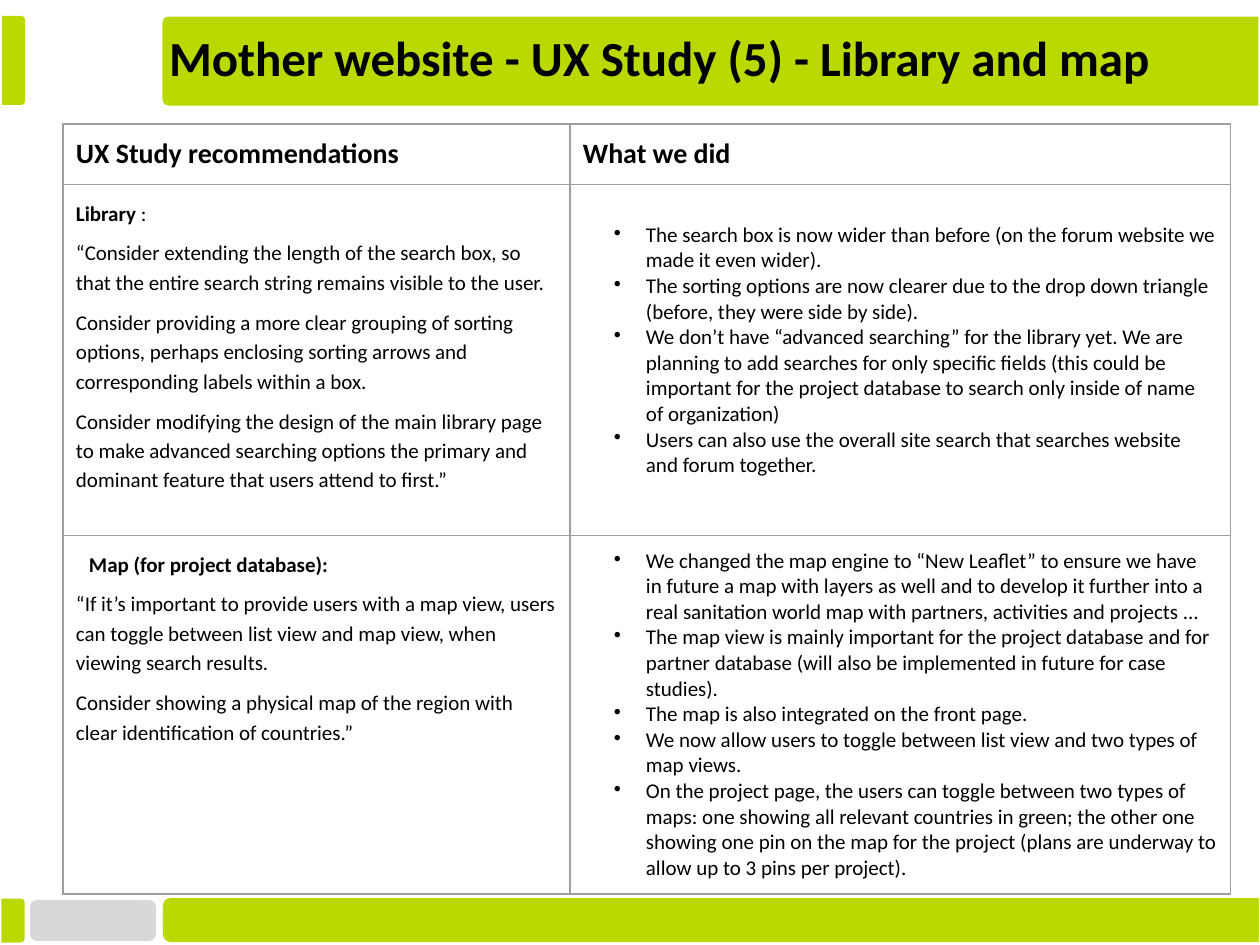
"""Build the slide on the library and map findings of the UX study."""
from dataclasses import dataclass

from lxml.etree import SubElement
from pptx import Presentation
from pptx.dml.color import RGBColor
from pptx.enum.shapes import MSO_SHAPE
from pptx.enum.text import MSO_ANCHOR, MSO_AUTO_SIZE, PP_ALIGN
from pptx.oxml.ns import qn
from pptx.util import Pt

EMU_PER_PIXEL = 914400 / 126
GREEN = RGBColor(0xBA, 0xD9, 0x00)
GREY = RGBColor(0xD8, 0xD8, 0xD8)
RULE = RGBColor(0x9E, 0x9E, 0x9E)
BLACK = RGBColor(0x00, 0x00, 0x00)
FONT = "Calibri"
MARGIN = 13


@dataclass(frozen=True)
class Bar:
    left: int
    top: int
    width: int
    height: int
    turn: int
    radius: float


@dataclass(frozen=True)
class Line:
    text: str
    bold: bool = False
    size: int = 12
    spacing: float = 1.0
    before: int = 0
    indent: int = 0
    hanging: int = 0
    tail: str = ""


@dataclass(frozen=True)
class Entry:
    lines: list[Line]
    top_margin: int = MARGIN


def px(length: int) -> int:
    """Turn pixels into EMU."""
    return round(length * EMU_PER_PIXEL)


def heading(text: str) -> Entry:
    """Return a column heading."""
    return Entry([Line(text, bold=True, size=16)])


def advice(title: Line, *texts: str) -> Entry:
    """Return a titled list of recommendations."""
    return Entry([title] + [Line(text, spacing=1.15, before=6) for text in texts])


def actions(*texts: str, top_margin: int = MARGIN) -> Entry:
    """Return a bulleted list of actions."""
    return Entry([Line(text, indent=63, hanging=32) for text in texts], top_margin)


BARS = [
    Bar(163, 898, 1096, 44, 270, 0.17),
    Bar(2, 16, 23, 89, 90, 0.17),
    Bar(163, 16, 1096, 89, 270, 0.07),
    Bar(2, 898, 23, 44, 90, 0.17),
]
COLUMNS = [507, 661]
ROWS = [58, 351, 358]
ENTRIES = [
    [heading("UX Study recommendations"), heading("What we did")],
    [
        advice(
            Line("Library", bold=True, spacing=1.15, tail=" :"),
            "“Consider extending the length of the search box, so that the entire search string remains visible to the user.",
            "Consider providing a more clear grouping of sorting options, perhaps enclosing sorting arrows and corresponding labels within a box.",
            "Consider modifying the design of the main library page to make advanced searching options the primary and dominant feature that users attend to first.”",
        ),
        actions(
            "The search box is now wider than before (on the forum website we made it even wider).",
            "The sorting options are now clearer due to the drop down triangle (before, they were side by side).",
            "We don’t have “advanced searching” for the library yet. We are planning to add searches for only specific fields (this could be important for the project database to search only inside of name of organization)",
            "Users can also use the overall site search that searches website and forum together.",
            top_margin=38,
        ),
    ],
    [
        advice(
            Line("Map (for project database):", bold=True, spacing=1.15, indent=13),
            "“If it’s important to provide users with a map view, users can toggle between list view and map view, when viewing search results.",
            "Consider showing a physical map of the region with clear identification of countries.”",
        ),
        actions(
            "We changed the map engine to “New Leaflet” to ensure we have in future a map with layers as well and to develop it further into a real sanitation world map with partners, activities and projects ...",
            "The map view is mainly important for the project database and for partner database (will also be implemented in future for case studies).",
            "The map is also integrated on the front page.",
            "We now allow users to toggle between list view and two types of map views.",
            "On the project page, the users can toggle between two types of maps: one showing all relevant countries in green; the other one showing one pin on the map for the project (plans are underway to allow up to 3 pins per project).",
        ),
    ],
]


def add_block(page, kind, left: int, top: int, width: int, height: int, color: RGBColor, radius: float):
    """Draw a plain filled shape and return it."""
    shape = page.shapes.add_shape(kind, px(left), px(top), px(width), px(height))
    shape.shadow.inherit = False
    shape.fill.solid()
    shape.fill.fore_color.rgb = color
    shape.line.fill.background()
    shape.adjustments[0] = radius
    return shape


def add_bar(page, bar: Bar) -> None:
    """Draw a bar whose rounded end comes from a quarter turn."""
    shift = (bar.width - bar.height) // 2
    shape = add_block(page, MSO_SHAPE.ROUND_2_SAME_RECTANGLE, bar.left + shift, bar.top - shift,
                      bar.height, bar.width, GREEN, bar.radius)
    shape.rotation = bar.turn


def add_span(para, text: str, size: int, bold: bool) -> None:
    """Add one formatted run."""
    span = para.add_run()
    span.text = text
    span.font.name = FONT
    span.font.size = Pt(size)
    span.font.bold = bold
    span.font.color.rgb = BLACK


def write_line(para, line: Line) -> None:
    """Format a paragraph and add its runs."""
    properties = para._p.get_or_add_pPr()
    properties.set("marL", str(px(line.indent)))
    properties.set("indent", str(-px(line.hanging)))
    if line.hanging:
        color = SubElement(properties, qn("a:buClr"))
        SubElement(color, qn("a:srgbClr"), val=str(BLACK))
        SubElement(properties, qn("a:buChar"), char="•")
    para.line_spacing = line.spacing
    para.space_before = Pt(line.before)
    add_span(para, line.text, line.size, line.bold)
    if line.tail:
        add_span(para, line.tail, line.size, False)


def fill_cell(cell, entry: Entry) -> None:
    """Write the entry and rule the cell on all sides."""
    cell.margin_left = cell.margin_right = cell.margin_bottom = px(MARGIN)
    cell.margin_top = px(entry.top_margin)
    for index, line in enumerate(entry.lines):
        frame = cell.text_frame
        write_line(frame.add_paragraph() if index else frame.paragraphs[0], line)
    properties = cell._tc.get_or_add_tcPr()
    for side in ("lnL", "lnR", "lnT", "lnB"):
        border = SubElement(properties, qn(f"a:{side}"), w=str(Pt(0.75)))
        SubElement(SubElement(border, qn("a:solidFill")), qn("a:srgbClr"), val=str(RULE))
    cell.fill.background()


def add_findings(page) -> None:
    """Draw the table of recommendations and actions."""
    table = page.shapes.add_table(len(ROWS), len(COLUMNS), px(63), px(124),
                                  px(sum(COLUMNS)), px(sum(ROWS))).table
    table.first_row = table.horz_banding = False
    for column, width in zip(table.columns, COLUMNS):
        column.width = px(width)
    for row, height, entries in zip(table.rows, ROWS, ENTRIES):
        row.height = px(height)
        for cell, entry in zip(row.cells, entries):
            fill_cell(cell, entry)


def place_title(page) -> None:
    """Set the title over the top bar."""
    title = page.shapes.title
    title.left, title.top, title.width, title.height = px(156), px(20), px(1187), px(82)
    frame = title.text_frame
    frame.word_wrap = True
    frame.auto_size = MSO_AUTO_SIZE.NONE
    frame.vertical_anchor = MSO_ANCHOR.MIDDLE
    frame.margin_left = frame.margin_right = frame.margin_top = frame.margin_bottom = px(MARGIN)
    para = frame.paragraphs[0]
    para.alignment = PP_ALIGN.LEFT
    write_line(para, Line("Mother website - UX Study (5) - Library and map", bold=True, size=28, spacing=0.9))
    page.shapes._spTree.append(title._element)


def main() -> None:
    """Build and save the deck."""
    deck = Presentation()
    deck.slide_width, deck.slide_height = px(1260), px(945)
    page = deck.slides.add_slide(deck.slide_layouts[5])
    add_block(page, MSO_SHAPE.ROUNDED_RECTANGLE, 30, 900, 126, 41, GREY, 0.17)
    for bar in BARS:
        add_bar(page, bar)
    add_findings(page)
    place_title(page)
    deck.save("out.pptx")


if __name__ == "__main__":
    main()
